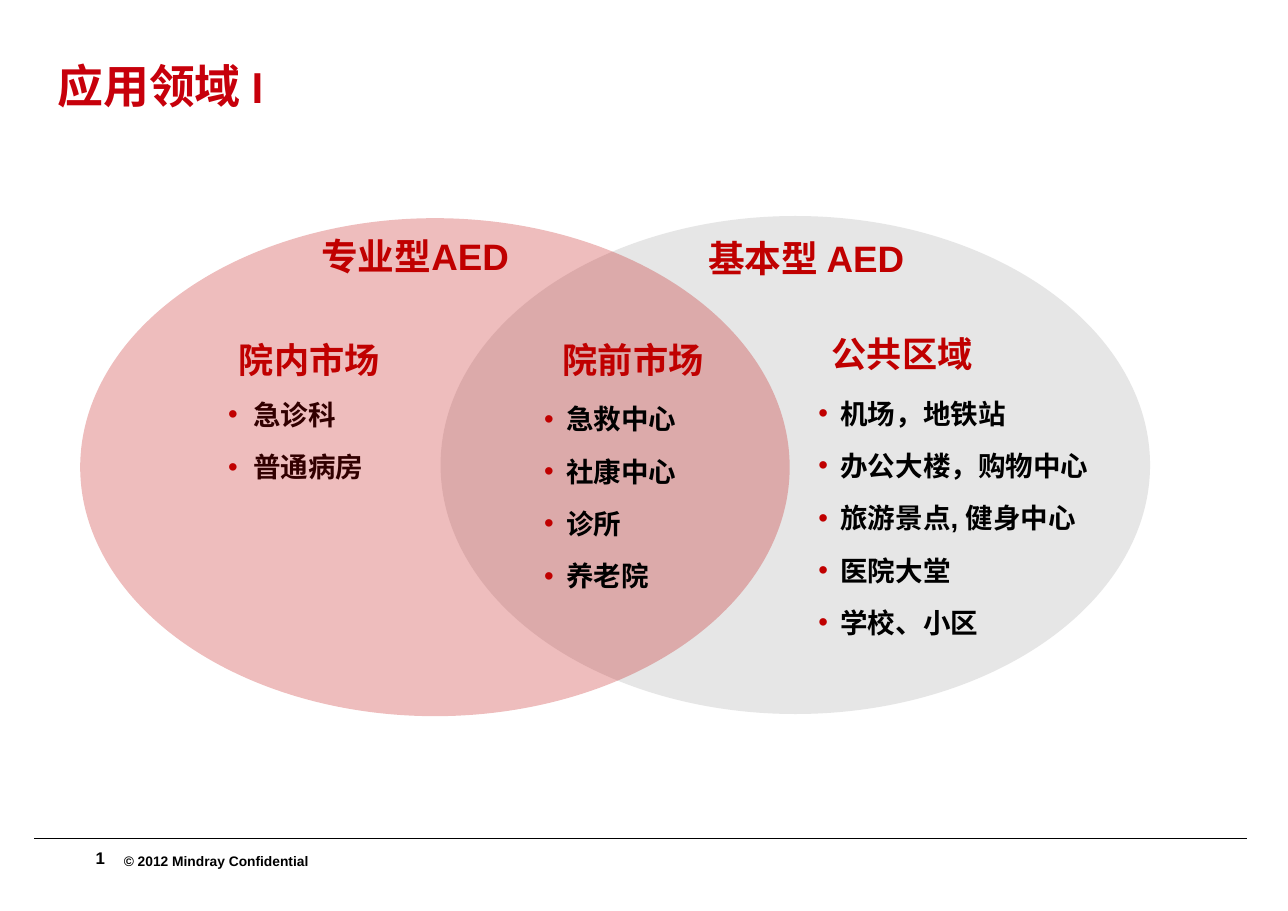
from dataclasses import dataclass

from lxml.etree import SubElement
from pptx import Presentation
from pptx.dml.color import RGBColor
from pptx.enum.shapes import MSO_CONNECTOR, MSO_SHAPE
from pptx.enum.text import MSO_ANCHOR, PP_ALIGN
from pptx.oxml.ns import qn
from pptx.util import Cm, Pt


@dataclass(frozen=True)
class Theme:
    title_red: str = "C7000B"
    red: str = "C00000"
    grey: str = "E6E6E6"
    black: str = "000000"
    font: str = "Arial"
    title_font: str = "Calibri"
    title_size: int = 30
    heading_size: int = 24
    market_size: int = 23
    item_size: int = 18
    number_size: int = 11
    footer_size: int = 9
    item_gap: float = 12.6
    red_alpha: int = 26


class SlideBuilder:
    def __init__(self, page, theme):
        self.page = page
        self.theme = theme

    def place(self, shape, left, top, width, height):
        shape.left, shape.top = Cm(left), Cm(top)
        shape.width, shape.height = Cm(width), Cm(height)

    def frame(self, shape, wrap=True):
        frame = shape.text_frame
        frame.word_wrap = wrap
        frame.vertical_anchor = MSO_ANCHOR.TOP
        frame.margin_left = frame.margin_right = Cm(0.28)
        frame.margin_top = frame.margin_bottom = Cm(0.15)
        return frame

    def span(self, para, text, size, color, font=None):
        span = para.add_run()
        span.text = text
        span.font.name = font or self.theme.font
        span.font.size = Pt(size)
        span.font.bold = True
        span.font.color.rgb = RGBColor.from_string(color)

    def title(self, text, *area):
        shape = self.page.shapes.title
        self.place(shape, *area)
        para = self.frame(shape).paragraphs[0]
        para.alignment = PP_ALIGN.LEFT
        self.span(para, text, self.theme.title_size, self.theme.title_red,
                  self.theme.title_font)

    def ellipse(self, color, left, top, alpha=None):
        shape = self.page.shapes.add_shape(
            MSO_SHAPE.OVAL, Cm(left), Cm(top), Cm(16.36), Cm(11.48))
        shape.shadow.inherit = False
        shape.line.fill.background()
        shape.fill.solid()
        shape.fill.fore_color.rgb = RGBColor.from_string(color)
        if alpha is not None:
            rgb = shape.fill._xPr.find(f".//{qn('a:srgbClr')}")
            SubElement(rgb, qn("a:alpha"), val=str(alpha * 1000))

    def label(self, text, size, color, alignment, area, wrap=True):
        box = self.page.shapes.add_textbox(*map(Cm, area))
        para = self.frame(box, wrap).paragraphs[0]
        para.alignment = alignment
        self.span(para, text, size, color)
        return box

    def heading(self, text, left, top):
        self.label(text, self.theme.heading_size, self.theme.red,
                   PP_ALIGN.CENTER, (left, top, 5.84, 1.32))

    def market(self, text, left, top):
        self.label(text, self.theme.market_size, self.theme.red,
                   PP_ALIGN.RIGHT, (left, top, 3.86, 1.27), wrap=False)

    def footer(self, text, size, *area):
        box = self.label(text, size, self.theme.black, PP_ALIGN.RIGHT, area)
        frame = box.text_frame
        frame.margin_left = frame.margin_right = Cm(0.25)
        frame.margin_top = frame.margin_bottom = Cm(0.13)

    def bullet(self, para, indent):
        properties = para._p.get_or_add_pPr()
        properties.set("marL", str(Cm(indent)))
        properties.set("indent", str(-Cm(indent)))
        color = SubElement(properties, qn("a:buClr"))
        SubElement(color, qn("a:srgbClr"), val=self.theme.red)
        SubElement(properties, qn("a:buFont"), typeface=self.theme.font)
        SubElement(properties, qn("a:buChar"), char="•")

    def bullets(self, items, area, indent=0.51):
        box = self.page.shapes.add_textbox(*map(Cm, area))
        frame = self.frame(box)
        for index, item in enumerate(items):
            para = frame.add_paragraph() if index else frame.paragraphs[0]
            self.bullet(para, indent)
            if index:
                para.space_before = Pt(self.theme.item_gap)
            self.span(para, item, self.theme.item_size, self.theme.black)

    def rule(self, left, right, top):
        line = self.page.shapes.add_connector(
            MSO_CONNECTOR.STRAIGHT, Cm(left), Cm(top), Cm(right), Cm(top))
        line.line.color.rgb = RGBColor.from_string(self.theme.black)
        line.line.width = Pt(0.5)
        SubElement(line._element.spPr, qn("a:effectLst"))


def main():
    deck = Presentation()
    deck.slide_width, deck.slide_height = Cm(29.7), Cm(21)
    theme = Theme()
    slide = SlideBuilder(deck.slides.add_slide(deck.slide_layouts[5]), theme)

    slide.title("应用领域 I", 1.04, 1.17, 17, 1.57)
    slide.footer("© 2012 Mindray Confidential", theme.footer_size,
                 2.46, 19.53, 4.9, 0.69)
    slide.footer("1", theme.number_size, 0.84, 19.41, 1.83, 0.94)
    slide.rule(0.79, 28.75, 19.33)

    slide.ellipse(theme.grey, 10.16, 4.98)
    slide.heading("专业型AED", 6.65, 5.23)
    # The translucent red ellipse tints the hospital list beneath it.
    slide.bullets(["急诊科", "普通病房"], (4.98, 9.02, 5.46, 2.36), indent=0.58)
    slide.market("院内市场", 5.18, 7.65)
    slide.ellipse(theme.red, 1.85, 5.03, theme.red_alpha)

    slide.heading("基本型 AED", 15.67, 5.28)
    slide.bullets(["机场，地铁站", "办公大楼，购物中心", "旅游景点, 健身中心",
                   "医院大堂", "学校、小区"], (18.59, 8.99, 7.26, 6.3))
    slide.market("公共区域", 18.85, 7.52)
    slide.bullets(["急救中心", "社康中心", "诊所", "养老院"],
                  (12.27, 9.12, 4.22, 4.98))
    slide.market("院前市场", 12.65, 7.65)

    deck.save("out.pptx")


if __name__ == "__main__":
    main()
